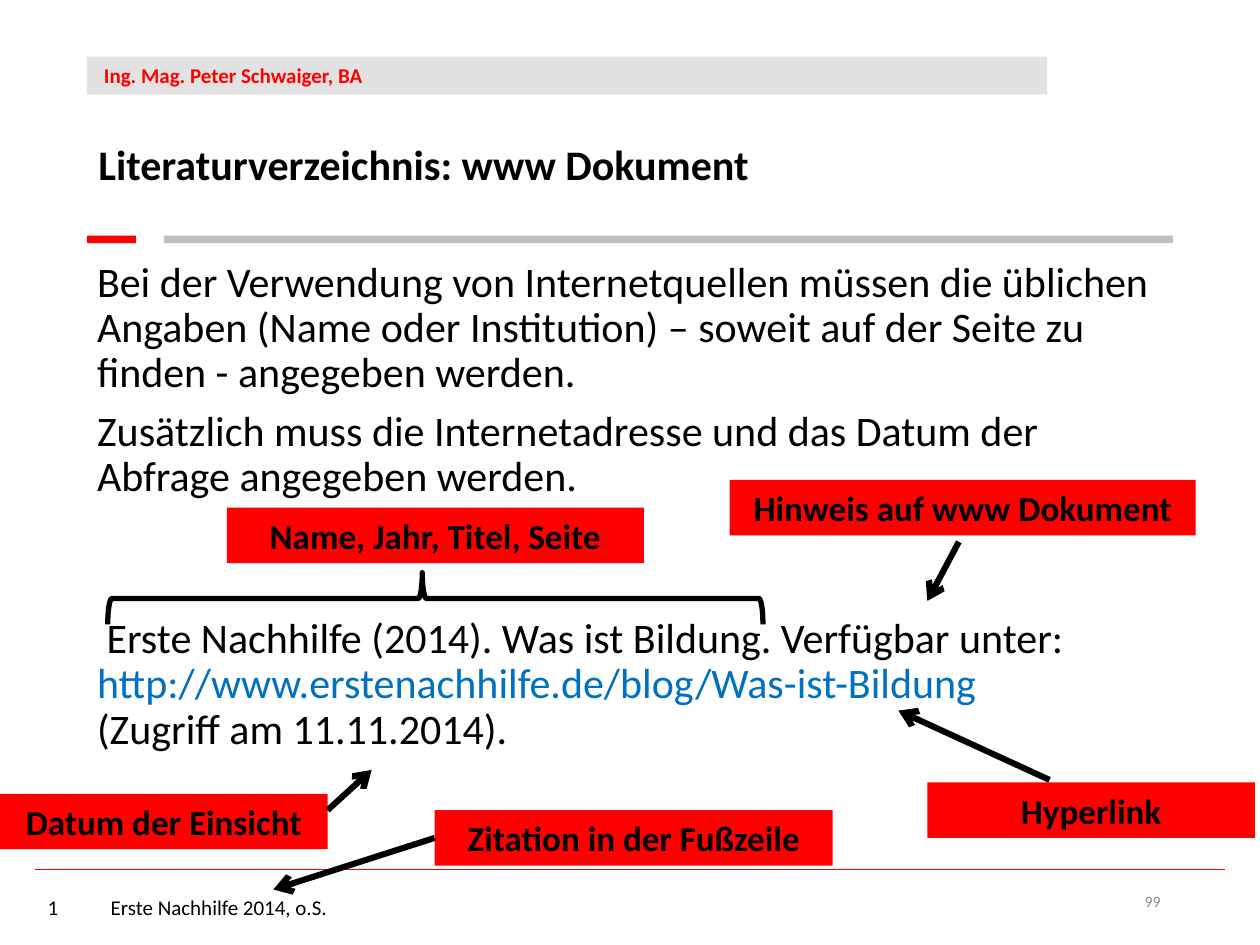
"""Build the slide on citing a www document in a bibliography."""
from lxml.etree import SubElement
from pptx import Presentation
from pptx.dml.color import RGBColor
from pptx.enum.shapes import MSO_CONNECTOR, MSO_SHAPE
from pptx.enum.text import MSO_ANCHOR, MSO_AUTO_SIZE, PP_ALIGN
from pptx.oxml.ns import qn
from pptx.util import Inches, Pt

presentation = Presentation()
presentation.slide_width, presentation.slide_height = Inches(10), Inches(7.5)
slide = presentation.slides.add_slide(presentation.slide_layouts[1])
unit = presentation.slide_width // 100


def grid(*cells):
    return [round(cell * unit) for cell in cells]


def write(paragraph, text, size, color, bold=False):
    run = paragraph.add_run()
    run.text = text
    run.font.name, run.font.size, run.font.bold = "Calibri", Pt(size), bold
    run.font.color.rgb = RGBColor.from_string(color)


bars = [
    (MSO_SHAPE.RECTANGLE, "D9D9D9", (6.9, 4.5, 76.2, 3)),
    (MSO_SHAPE.ROUNDED_RECTANGLE, "BFBFBF", (13, 18.7, 80.1, 0.6)),
    (MSO_SHAPE.ROUNDED_RECTANGLE, "FF0000", (6.9, 18.7, 3.9, 0.6)),
]
for kind, color, box in bars:
    bar = slide.shapes.add_shape(kind, *grid(*box))
    bar.shadow.inherit = False
    bar.fill.solid()
    bar.fill.fore_color.rgb = RGBColor.from_string(color)
    bar.line.fill.background()
    if color == "D9D9D9":
        fill_color = bar.fill._xPr.find(qn("a:solidFill"))[0]
        SubElement(fill_color, qn("a:alpha"), val="75000")
        bar.text_frame.margin_left = grid(1.35)[0]
        author = bar.text_frame.paragraphs[0]
        author.alignment = PP_ALIGN.LEFT
        write(author, "Ing. Mag. Peter Schwaiger, BA", 12, "FF0000", True)

title = slide.shapes.title
title.left, title.top, title.width, title.height = grid(6.8, 8.4, 76.2, 9.7)
title.text_frame.vertical_anchor = MSO_ANCHOR.MIDDLE
title.text_frame.auto_size = MSO_AUTO_SIZE.NONE
heading = title.text_frame.paragraphs[0]
heading.alignment, heading.line_spacing = PP_ALIGN.LEFT, 0.9
write(heading, "Literaturverzeichnis: www Dokument", 24, "000000", True)

body = slide.placeholders[1]
body.left, body.top, body.width, body.height = grid(6.7, 20.2, 85.7, 53.3)
body.text_frame.auto_size = MSO_AUTO_SIZE.NONE
paragraphs = [
    (0, 0, [("Bei der Verwendung von Internetquellen müssen die üblichen Angaben "
             "(Name oder Institution) – soweit auf der Seite zu finden - "
             "angegeben werden.", "000000")]),
    (7.5, 0, [("Zusätzlich muss die Internetadresse und das Datum der Abfrage "
               "angegeben werden.", "000000")]),
    (66.5, 0.75, [("Erste Nachhilfe (2014). Was ist Bildung. Verfügbar unter:", "000000"),
                  ("http://www.erstenachhilfe.de/blog/Was-ist-Bildung", "0070C0"),
                  ("(Zugriff am 11.11.2014).", "000000")]),
]
for index, (space, indent, lines) in enumerate(paragraphs):
    frame = body.text_frame
    paragraph = frame.add_paragraph() if index else frame.paragraphs[0]
    properties = paragraph._p.get_or_add_pPr()
    properties.set("marL", "0")
    properties.set("indent", str(grid(indent)[0]))
    SubElement(properties, qn("a:buNone"))
    paragraph.line_spacing, paragraph.space_before = 0.9, Pt(space)
    for number, (text, color) in enumerate(lines):
        if number:
            paragraph.add_line_break()
        write(paragraph, text, 24, color)

footers = [
    ("1\tErste Nachhilfe 2014, o.S.", 12, "000000", PP_ALIGN.LEFT, (2.8, 69.5, 67.9, 5)),
    ("99", 9, "8C8C8C", PP_ALIGN.RIGHT, (70.6, 69.5, 22.5, 4)),
]
for text, size, color, alignment, box in footers:
    footer = slide.shapes.add_textbox(*grid(*box))
    footer.text_frame.word_wrap = True
    footer.text_frame.vertical_anchor = MSO_ANCHOR.MIDDLE
    footer.text_frame.paragraphs[0].alignment = alignment
    write(footer.text_frame.paragraphs[0], text, size, color)

labels = [
    ("Hyperlink", 73.6, 62.1, 26),
    ("Datum der Einsicht", 0, 63, 26),
    ("Name, Jahr, Titel, Seite", 18, 40.3, 33.1),
    ("Hinweis auf www Dokument", 57.9, 38.1, 37),
    ("Zitation in der Fußzeile", 34.5, 64.3, 31.6),
]
for text, left, top, width in labels:
    label = slide.shapes.add_shape(MSO_SHAPE.RECTANGLE, *grid(left, top, width, 4.4))
    label.shadow.inherit = False
    label.fill.solid()
    label.fill.fore_color.rgb = RGBColor.from_string("FF0000")
    label.line.fill.background()
    label.text_frame.paragraphs[0].alignment = PP_ALIGN.CENTER
    write(label.text_frame.paragraphs[0], text, 20, "000000", True)

brace = slide.shapes.add_shape(MSO_SHAPE.LEFT_BRACE, *grid(32.5, 21.5, 4.1, 52))
brace.rotation = 90
brace.adjustments[0], brace.adjustments[1] = 0.08, 0.52
brace.shadow.inherit = False
brace.fill.background()
brace.line.color.rgb = RGBColor.from_string("000000")
brace.line.width = Pt(3)

lines = [
    ("FF0000", 1, (2.8, 69, 97.2, 69)),
    ("000000", 3.5, (26, 64.3, 29.5, 61.1)),
    ("000000", 3.5, (83.3, 61.9, 71.3, 56.4)),
    ("000000", 3.5, (76.1, 43, 73.6, 47.7)),
    ("000000", 3.5, (34.5, 66.5, 21.7, 70.6)),
]
for color, width, ends in lines:
    connector = slide.shapes.add_connector(MSO_CONNECTOR.STRAIGHT, *grid(*ends))
    connector.line.color.rgb = RGBColor.from_string(color)
    connector.line.width = Pt(width)
    if color == "000000":
        SubElement(connector.line._get_or_add_ln(), qn("a:tailEnd"), type="arrow")
    SubElement(connector._element.spPr, qn("a:effectLst"))

presentation.save("out.pptx")
